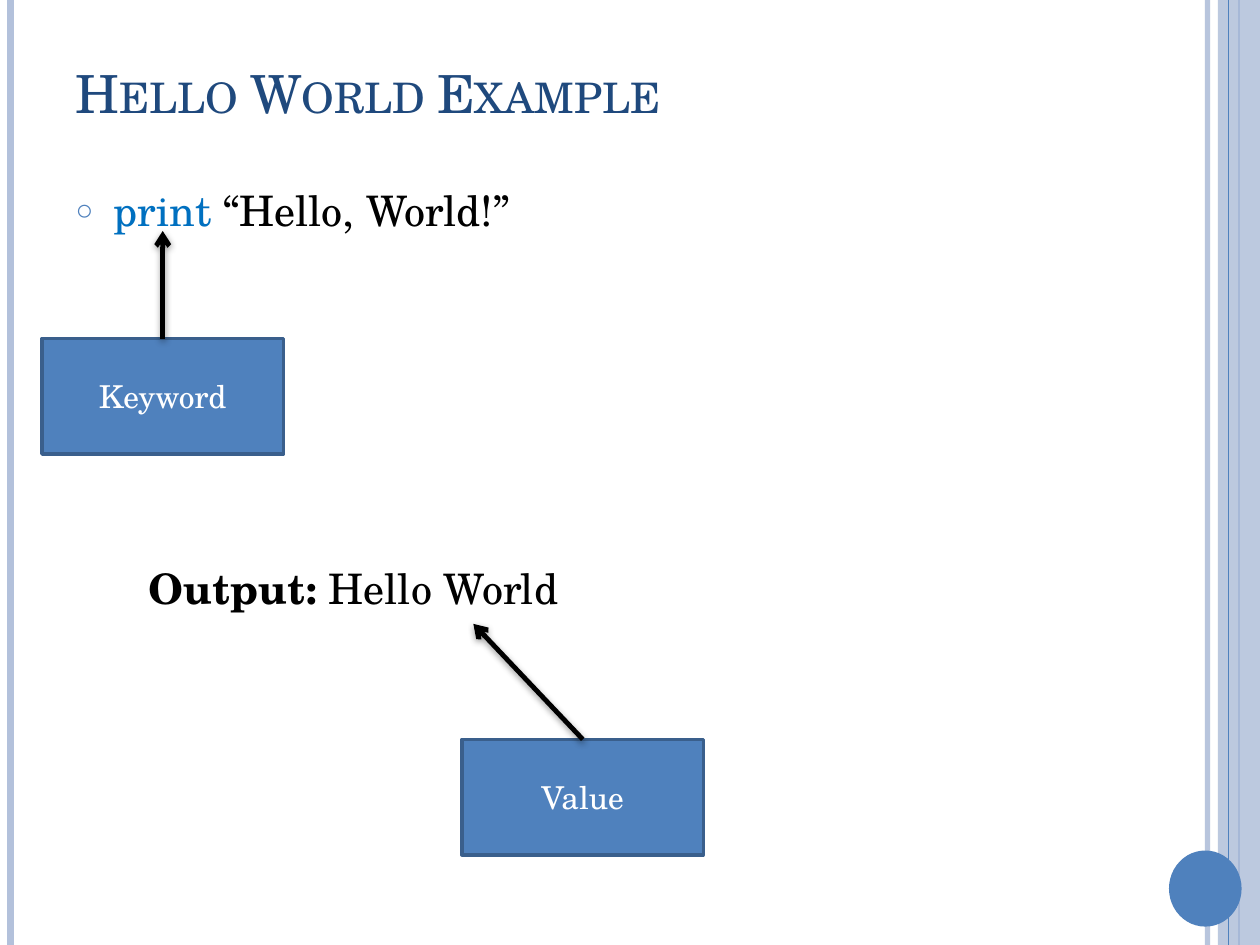
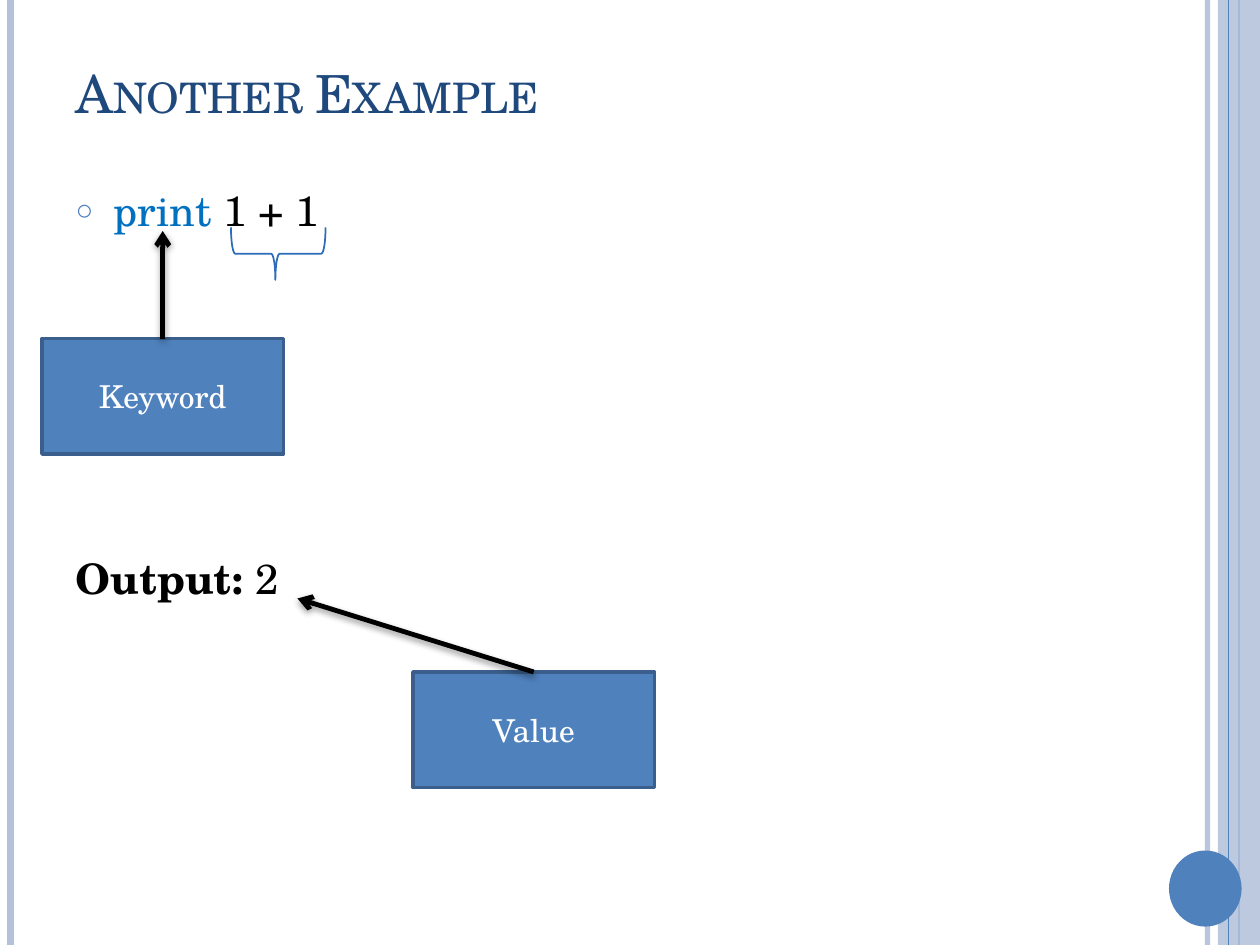
from dataclasses import dataclass

from lxml import etree
from pptx import Presentation
from pptx.dml.color import RGBColor
from pptx.enum import dml, shapes, text
from pptx.oxml import ns
from pptx.util import Pt


@dataclass(frozen=True)
class Theme:
    font: str = "TeX Gyre Schola"
    title: str = "1F497D"
    accent: str = "4F81BD"
    band: str = "B3C1DB"
    border: str = "3A5F8C"
    brace: str = "2C6CB9"
    keyword: str = "0070C0"
    ink: str = "000000"
    paper: str = "FFFFFF"
    title_size: int = 30
    body_size: int = 24
    label_size: int = 18


THEME = Theme()
WIDTH, HEIGHT = 720, 540
BOX_WIDTH, BOX_HEIGHT = 138, 66
TOP_SITE = 0


def rgb(color):
    return RGBColor.from_string(color)


def add_xml(parent, tag, **attributes):
    return etree.SubElement(parent, ns.qn(tag), attributes)


def set_opacity(shape, percent):
    color = next(shape.element.spPr.iter(ns.qn("a:srgbClr")))
    add_xml(color, "a:alpha", val=str(percent * 1000))


def place(shape, left, top, width, height):
    shape.left, shape.top = Pt(left), Pt(top)
    shape.width, shape.height = Pt(width), Pt(height)


def style_paragraph(paragraph, size, color, align=text.PP_ALIGN.LEFT):
    paragraph.alignment = align
    paragraph.font.name = THEME.font
    paragraph.font.size = Pt(size)
    paragraph.font.color.rgb = rgb(color)


def add_run(paragraph, words, color=THEME.ink, bold=False):
    run = paragraph.add_run()
    run.text = words
    run.font.color.rgb = rgb(color)
    run.font.bold = bold


def add_line(container, start, end, color, width):
    line = container.add_connector(
        shapes.MSO_CONNECTOR.STRAIGHT, *(Pt(value) for value in (*start, *end)))
    line.line.color.rgb = rgb(color)
    line.line.width = Pt(width)
    add_xml(line.element.spPr, "a:effectLst")
    return line


def add_preset(container, kind, left, top, width, height, fill=None):
    shape = container.add_shape(kind, Pt(left), Pt(top), Pt(width), Pt(height))
    shape.shadow.inherit = False
    if fill:
        shape.fill.solid()
        shape.fill.fore_color.rgb = rgb(fill)
    else:
        shape.fill.background()
    shape.line.fill.background()
    return shape


def add_rule(container, x, color, width):
    return add_line(container, (x, 0), (x, HEIGHT), color, width)


def decorate_layout(layout, slide):
    for placeholder in list(layout.placeholders)[2:]:
        placeholder.element.getparent().remove(placeholder.element)
    inner_rule = add_rule(slide.shapes, 690, THEME.band, 3)
    set_opacity(inner_rule, 93)
    left_rule = add_rule(slide.shapes, 6, THEME.band, 4.5)
    covered_rule = add_rule(slide.shapes, 708, THEME.accent, 1.5)
    side_band = add_preset(slide.shapes, shapes.MSO_SHAPE.RECTANGLE,
                           696, 0, 24, HEIGHT, THEME.band)
    set_opacity(side_band, 87)
    band_rule = add_rule(slide.shapes, 702, THEME.accent, 0.75)
    disc = add_preset(slide.shapes, shapes.MSO_SHAPE.OVAL,
                      668, 486, 41.5, 43.5, THEME.accent)
    for shape in (inner_rule, left_rule, covered_rule, side_band, band_rule, disc):
        layout.element.cSld.spTree.append(shape.element)


def set_title(slide, words):
    title = slide.shapes.title
    place(title, 36, 21.5, 624, 62.5)
    frame = title.text_frame
    frame.text = words
    frame.vertical_anchor = text.MSO_ANCHOR.MIDDLE
    frame.auto_size = text.MSO_AUTO_SIZE.NONE
    style_paragraph(frame.paragraphs[0], THEME.title_size, THEME.title)
    next(title.element.iter(ns.qn("a:defRPr"))).set("cap", "small")


def set_bullet(shape):
    properties = next(shape.element.iter(ns.qn("a:pPr")))
    indent = Pt(21.6)
    properties.set("marL", str(indent))
    properties.set("indent", str(-indent))
    add_xml(add_xml(properties, "a:buClr"), "a:srgbClr", val=THEME.accent)
    add_xml(properties, "a:buSzPct", val="70000")
    add_xml(properties, "a:buChar", char="○")


def set_statement(slide, expression, height):
    body = slide.placeholders[1]
    place(body, 36, 102, 624, height)
    frame = body.text_frame
    frame.auto_size = text.MSO_AUTO_SIZE.NONE
    paragraph = frame.paragraphs[0]
    paragraph.space_before = Pt(6)
    set_bullet(body)
    style_paragraph(paragraph, THEME.body_size, THEME.ink)
    add_run(paragraph, "print ", THEME.keyword)
    add_run(paragraph, expression)


def add_arrow(container, box, target):
    start = (box.left.pt + box.width.pt / 2, box.top.pt)
    arrow = add_line(container, start, target, THEME.ink, 2.75)
    arrow.begin_connect(box, TOP_SITE)
    add_xml(arrow.line._get_or_add_ln(), "a:tailEnd", type="arrow")
    effects = arrow.element.spPr.find(ns.qn("a:effectLst"))
    shadow = add_xml(effects, "a:outerShdw", blurRad=str(Pt(4)),
                     dist=str(Pt(1.6)), dir="5400000", rotWithShape="0")
    add_xml(add_xml(shadow, "a:srgbClr", val=THEME.ink), "a:alpha", val="42000")


def add_callout(slide, label, left, top, target):
    group = slide.shapes.add_group_shape()
    box = add_preset(group.shapes, shapes.MSO_SHAPE.RECTANGLE,
                     left, top, BOX_WIDTH, BOX_HEIGHT, THEME.accent)
    box.line.color.rgb = rgb(THEME.border)
    box.line.width = Pt(2)
    frame = box.text_frame
    frame.text = label
    frame.vertical_anchor = text.MSO_ANCHOR.MIDDLE
    style_paragraph(frame.paragraphs[0], THEME.label_size, THEME.paper,
                    text.PP_ALIGN.CENTER)
    add_arrow(group.shapes, box, target)
    return group


def add_output(group, result, left, top, width):
    box = group.shapes.add_textbox(Pt(left), Pt(top), Pt(width), Pt(36))
    frame = box.text_frame
    frame.word_wrap = False
    frame.auto_size = text.MSO_AUTO_SIZE.SHAPE_TO_FIT_TEXT
    paragraph = frame.paragraphs[0]
    style_paragraph(paragraph, THEME.body_size, THEME.ink)
    add_run(paragraph, "Output: ", bold=True)
    add_run(paragraph, result)


def add_brace(slide):
    brace = add_preset(slide.shapes, shapes.MSO_SHAPE.LEFT_BRACE, 144, 118, 30, 54)
    brace.rotation = 270
    brace.adjustments[0], brace.adjustments[1] = 0.08, 0.47
    brace.line.fill.solid()
    brace.line.fill.fore_color.rgb = rgb(THEME.brace)
    brace.line.dash_style = dml.MSO_LINE.SOLID
    brace.line.width = Pt(1)


def add_example(slide, title, expression, body_height, value_box, value_target,
                result, output_box):
    set_title(slide, title)
    set_statement(slide, expression, body_height)
    add_callout(slide, "Keyword", 24, 193.5, (93, 132))
    value = add_callout(slide, "Value", *value_box, value_target)
    add_output(value, result, *output_box)


def main():
    presentation = Presentation()
    presentation.slide_width, presentation.slide_height = Pt(WIDTH), Pt(HEIGHT)
    layout = presentation.slide_layouts[1]

    hello = presentation.slides.add_slide(layout)
    decorate_layout(layout, hello)
    add_example(hello, "Hello World Example", "“Hello, World!”", 288,
                (264, 422.5), (270.5, 356.5), "Hello World", (78, 318, 252.5))

    another = presentation.slides.add_slide(layout)
    add_example(another, "Another Example", "1 + 1", 222,
                (236, 384), (170, 342), "2", (36, 312, 132))
    add_brace(another)

    presentation.save("out.pptx")


if __name__ == "__main__":
    main()
